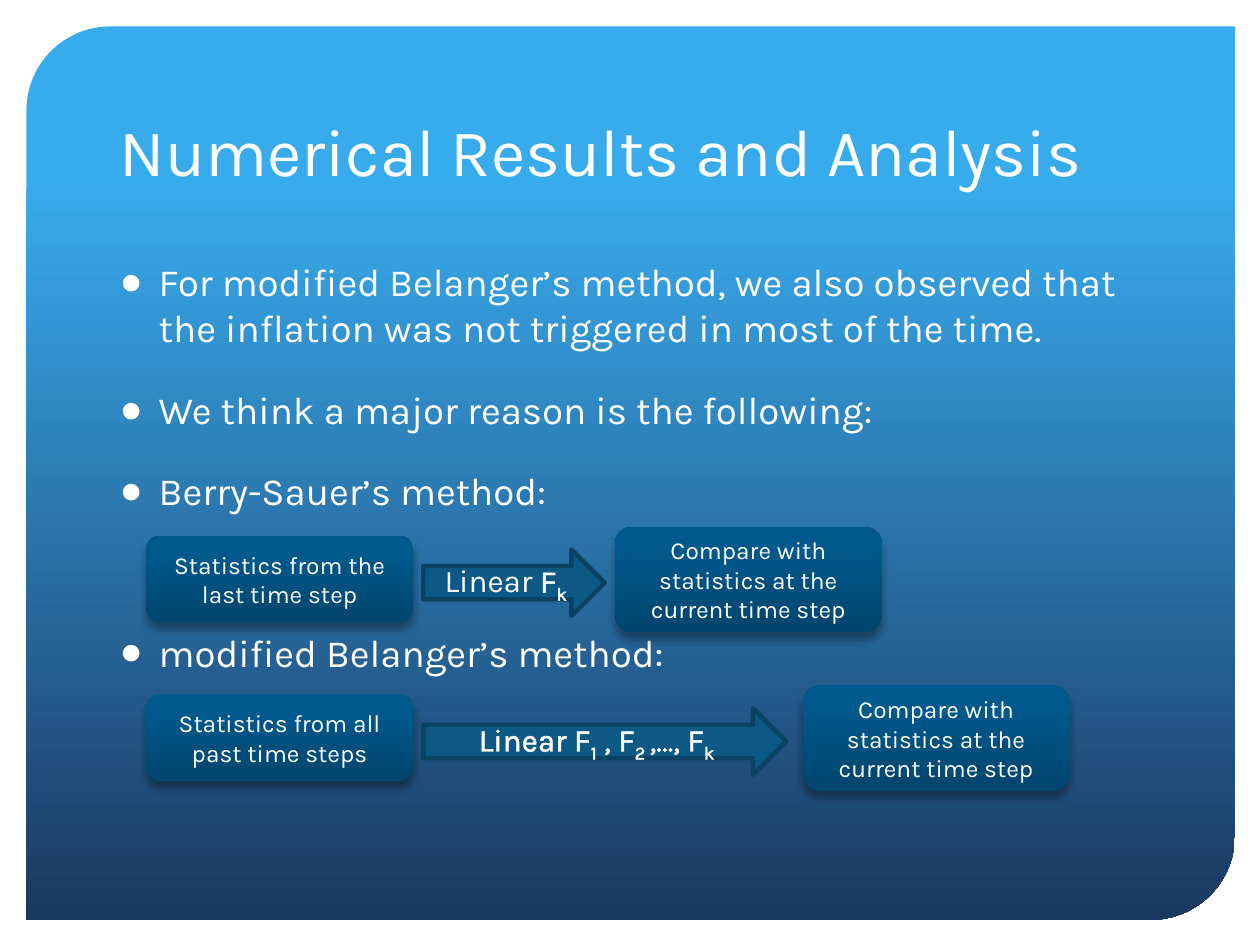
from lxml import etree
from pptx import Presentation
from pptx.dml.color import RGBColor as RGB
from pptx.enum.shapes import MSO_SHAPE as Kind
from pptx.enum.text import MSO_ANCHOR as Anchor, MSO_AUTO_SIZE as Fit, PP_ALIGN as Align
from pptx.oxml import parse_xml
from pptx.oxml.ns import nsdecls, qn
from pptx.util import Inches, Pt

WHITE = RGB(0xFF, 0xFF, 0xFF)
SKY = RGB(0x38, 0xAB, 0xED)
NAVY = RGB(0x1B, 0x38, 0x61)
DEEP = RGB(0x00, 0x45, 0x6D)
TEAL = RGB(0x00, 0x59, 0x8D)
CREST = RGB(0x00, 0x5A, 0x8E)
ARROW = RGB(0x0C, 0x59, 0x86)
EDGE = RGB(0x09, 0x42, 0x63)
FONT = "Karla"


def write(par, text, size=14, color=WHITE, base=0, edge=0):
    """Add one run; base shifts it in percent, edge outlines it in points."""
    run = par.add_run()
    run.text = text
    font = run.font
    font.name, font.size = FONT, Pt(size)
    font.color.rgb = color
    props = run._r.get_or_add_rPr()
    if base:
        props.set("baseline", str(base * 1000))
    if edge:
        props.insert(0, parse_xml(
            f'<a:ln {nsdecls("a")} w="{Pt(edge)}"><a:solidFill>'
            f'<a:srgbClr val="{color}"/></a:solidFill></a:ln>'))


def blend(shape, stops, angle):
    """Fill a shape with a linear gradient of (percent, colour) stops."""
    shape.fill.gradient()
    grad = shape._element.spPr.find(qn("a:gradFill"))
    marks = "".join(f'<a:gs pos="{pos * 1000}"><a:srgbClr val="{color}"/></a:gs>'
                    for pos, color in stops)
    new = parse_xml(f'<a:gradFill {nsdecls("a")} rotWithShape="1"><a:gsLst>{marks}</a:gsLst>'
                    f'<a:lin ang="{angle * 60000}" scaled="0"/></a:gradFill>')
    grad.getparent().replace(grad, new)


class Deck:
    def __init__(self):
        self.prs = Presentation()
        self.prs.slide_width, self.prs.slide_height = Inches(10), Inches(7.5)
        self.slide = self.prs.slides.add_slide(self.prs.slide_layouts[1])

    def shape(self, home, kind, box):
        item = home.add_shape(kind, *map(Inches, box))
        item.shadow.inherit = False
        item.line.fill.background()
        return item

    def panel(self, box):
        item = self.shape(self.slide.shapes, Kind.ROUND_2_DIAG_RECTANGLE, box)
        item.adjustments[0], item.adjustments[1] = 0.094, 0
        blend(item, [(17, SKY), (100, NAVY)], 90)
        self.slide.shapes._spTree.insert(2, item._element)

    def place(self, holder, box, anchor):
        holder.left, holder.top, holder.width, holder.height = map(Inches, box)
        frame = holder.text_frame
        frame.word_wrap, frame.auto_size = True, Fit.NONE
        frame.vertical_anchor = anchor
        return frame

    def title(self, text, box):
        frame = self.place(self.slide.shapes.title, box, Anchor.BOTTOM)
        par = frame.paragraphs[0]
        par.alignment = Align.LEFT
        write(par, text, size=38)

    def bullets(self, items, box):
        frame = self.place(self.slide.placeholders[1], box, Anchor.TOP)
        for i, (text, gap) in enumerate(items):
            par = frame.add_paragraph() if i else frame.paragraphs[0]
            props = par._p.get_or_add_pPr()
            props.set("marL", str(Inches(0.31)))
            props.set("indent", str(-Inches(0.31)))
            etree.SubElement(props, qn("a:buChar")).set("char", "●")
            par.space_before = Pt(gap)
            write(par, text, size=22)

    def label(self, item, runs, size):
        frame = item.text_frame
        frame.word_wrap, frame.vertical_anchor = True, Anchor.MIDDLE
        par = frame.paragraphs[0]
        par.alignment = Align.CENTER
        for text, form in runs:
            write(par, text, size=size, **form)

    def card(self, home, text, box):
        item = self.shape(home, Kind.ROUNDED_RECTANGLE, box)
        blend(item, [(0, DEEP), (80, TEAL), (100, CREST)], 270)
        item._element.spPr.find(qn("a:effectLst")).append(parse_xml(
            f'<a:outerShdw {nsdecls("a")} blurRad="{Pt(5)}" dist="{Pt(4)}" dir="5400000" '
            'rotWithShape="0"><a:srgbClr val="000000"><a:alpha val="35000"/></a:srgbClr>'
            '</a:outerShdw>'))
        self.label(item, [(text, {})], 14)

    def arrow(self, home, runs, box):
        item = self.shape(home, Kind.RIGHT_ARROW, box)
        item.fill.solid()
        item.fill.fore_color.rgb = ARROW
        item.line.color.rgb, item.line.width = EDGE, Pt(2.5)
        self.label(item, runs, 18)

    def flow(self, mid, start, runs, span, end, last):
        """Draw card, arrow and card, all centred near height mid."""
        home = self.slide.shapes.add_group_shape().shapes
        self.card(home, start, (1.16, mid - 0.35, 2.12, 0.69))
        self.arrow(home, runs, (3.36, mid - 0.24, span, 0.53))
        self.card(home, last, (end, mid - 0.42, 2.12, 0.84))


def main():
    deck = Deck()

    # Backdrop and text
    deck.panel((0.21, 0.21, 9.59, 7.09))
    deck.title("Numerical Results and Analysis", (0.85, 0.42, 8.29, 1.14))
    deck.bullets([
        ("For modified Belanger’s method, we also observed that "
         "the inflation was not triggered in most of the time.", 0),
        ("We think a major reason is the following:", 20),
        ("Berry-Sauer’s method:", 20),
        ("modified Belanger’s method:", 66),  # leaves room for the first flow
    ], (0.85, 2, 8.29, 4.6))

    # Flows of the two methods
    line = {"edge": 1.45}
    sub = {"edge": 1.45, "base": -25}
    last = "Compare with statistics at the current time step"
    deck.flow(4.6, "Statistics from the last time step",
              [("Linear ", {}), ("F", line), ("k", sub)], 1.44, 4.88, last)
    deck.flow(5.86, "Statistics from all past time steps",
              [("Linear F", line), ("1", sub), (" , F", line), ("2 ", sub),
               (",…, F", line), ("k", sub)], 2.88, 6.37, last)

    deck.prs.save("out.pptx")


if __name__ == "__main__":
    main()
